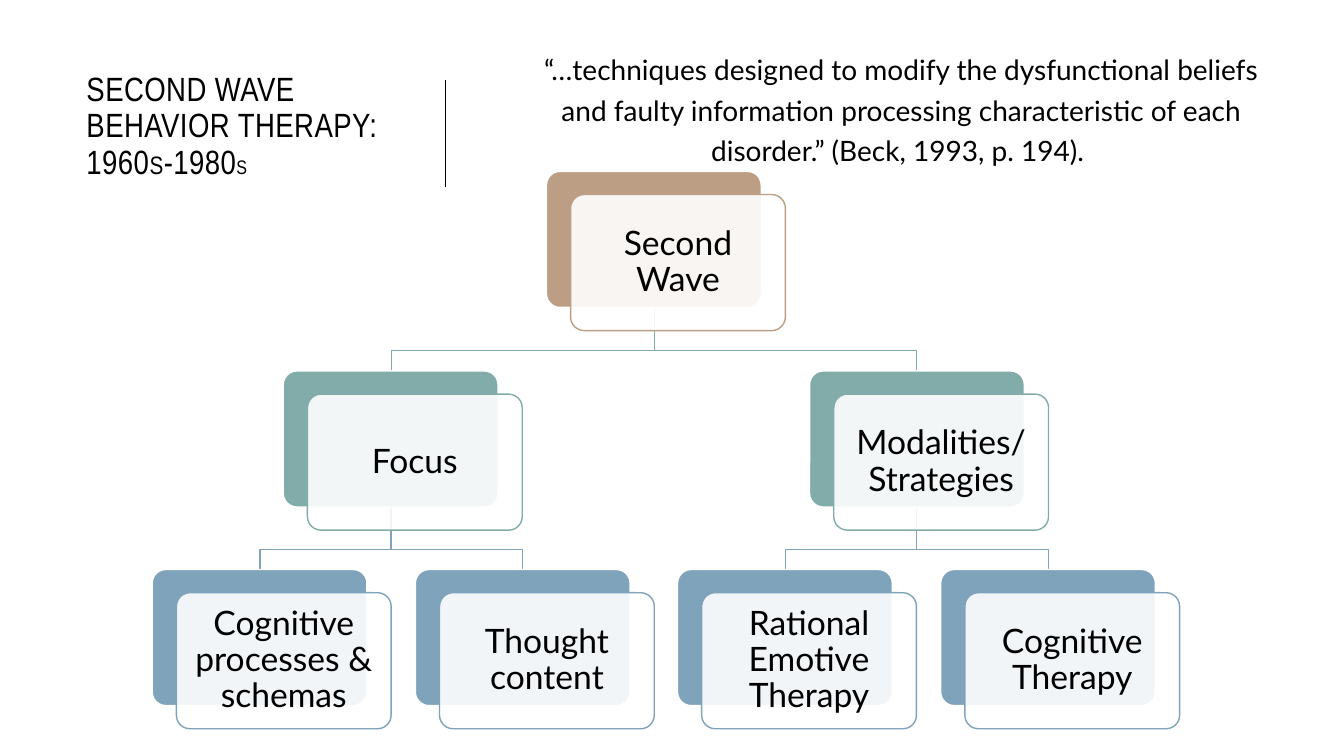
from itertools import count
from lxml.etree import SubElement
from pptx import Presentation
from pptx.dml.color import RGBColor
from pptx.enum.shapes import MSO_CONNECTOR as Link, MSO_SHAPE as Form
from pptx.enum.text import MSO_ANCHOR as Anchor, PP_ALIGN as Align
from pptx.oxml.ns import qn
from pptx.util import Pt

PX = 9144  # 100 px to the inch
CARD_W, CARD_H = 213, 135
SHIFT_X, SHIFT_Y = 24, 23
LEFT, STEP = 151, 260.67
TOPS = [170, 368, 565]
HUES = ["BC9E84", "82ACAA", "7FA3BA"]
TREE = ("Second Wave", [
    ("Focus", [("Cognitive processes & schemas", []), ("Thought content", [])]),
    ("Modalities/Strategies", [("Rational Emotive Therapy", []), ("Cognitive Therapy", [])]),
])


def color(text):
    return RGBColor.from_string(text)


def emu(*sizes):
    return [round(size) * PX for size in sizes]


class Slide:
    ink, white = "000000", "FFFFFF"
    head, body = "Arial Narrow", "Lato"

    def __init__(self, deck):
        self.shapes = deck.slides.add_slide(deck.slide_layouts[6]).shapes

    def font(self, para, name, size=None):
        para.font.name = name
        para.font.color.rgb = color(self.ink)
        if size:
            para.font.size = Pt(size)

    def text(self, x, y, w, h):
        frame = self.shapes.add_textbox(*emu(x, y, w, h)).text_frame
        frame.word_wrap = True
        return frame.paragraphs[0]

    def title(self, box, parts):
        para = self.text(*box)
        para.line_spacing = 0.9
        self.font(para, self.head)
        for words, size in parts:
            run = para.add_run()
            run.text = words
            run.font.size = Pt(size)
            run.font._element.set("spc", "30")

    def quote(self, box, words):
        para = self.text(*box)
        para.text = words
        para.alignment = Align.CENTER
        para.line_spacing = 1.2
        self.font(para, self.body, 20)

    def rule(self, x, low, high):
        line = self.shapes.add_connector(Link.STRAIGHT, *emu(x, low, x, high))
        line.line.color.rgb = color(self.ink)
        line.line.width = Pt(1)
        SubElement(line._element.spPr, qn("a:effectLst"))

    def elbow(self, points, hue):
        first, *rest = [emu(*point) for point in points]
        path = self.shapes.build_freeform(*first)
        path.add_line_segments(rest, close=False)
        shape = path.convert_to_shape()
        shape.shadow.inherit = False
        shape.fill.background()
        shape.line.color.rgb = color(hue)
        shape.line.width = Pt(1)

    def panel(self, x, y, fill, edge):
        shape = self.shapes.add_shape(Form.ROUNDED_RECTANGLE, *emu(x, y, CARD_W, CARD_H))
        shape.adjustments[0] = 0.1
        shape.shadow.inherit = False
        shape.fill.solid()
        shape.fill.fore_color.rgb = color(fill)
        shape.line.color.rgb = color(edge)
        shape.line.width = Pt(1)
        return shape

    def card(self, x, y, hue, words):
        """Draw a solid panel with a translucent, labelled one over it."""
        self.panel(x, y, hue, self.white)
        front = self.panel(x + SHIFT_X, y + SHIFT_Y, self.white, hue)
        tone = front._element.spPr.find(qn("a:solidFill"))[0]
        SubElement(tone, qn("a:alpha"), val="90000")
        frame = front.text_frame
        frame.word_wrap = True
        frame.vertical_anchor = Anchor.MIDDLE
        frame.margin_left = frame.margin_right = 10 * PX
        frame.margin_top = frame.margin_bottom = 10 * PX
        para = frame.paragraphs[0]
        para.text = words
        para.alignment = Align.CENTER
        para.line_spacing = 0.9
        self.font(para, self.body, 24)


def place(node, slots, cards, links, level=0):
    """Set leaves in even columns and centre each parent over its children."""
    words, kids = node
    spots = [place(kid, slots, cards, links, level + 1) for kid in kids]
    x = sum(spots) / len(spots) if spots else LEFT + STEP * next(slots)
    cards.append((x, TOPS[level], HUES[level], words))
    mid = x + CARD_W / 2
    for spot in spots:
        end, top = spot + CARD_W / 2, TOPS[level + 1]
        turn = top - 20
        points = [(mid, TOPS[level] + CARD_H), (mid, turn), (end, turn), (end, top)]
        links.append((points, HUES[level + 1]))
    return x


def main():
    deck = Presentation()
    deck.slide_width, deck.slide_height = emu(1333, 750)
    slide = Slide(deck)
    slide.title((76, 67, 317, 135), [
        ("SECOND WAVE BEHAVIOR THERAPY: 1960", 24), ("S", 18), ("-1980", 24), ("S", 14)])
    slide.rule(442, 186, 79)
    slide.quote((527, 41, 734, 135),
                "“…techniques designed to modify the dysfunctional beliefs and faulty "
                "information processing characteristic of each disorder.” (Beck, 1993, p. 194). ")
    cards, links = [], []
    place(TREE, count(), cards, links)
    for link in links:
        slide.elbow(*link)
    for card in cards:
        slide.card(*card)
    deck.save("out.pptx")


if __name__ == "__main__":
    main()
